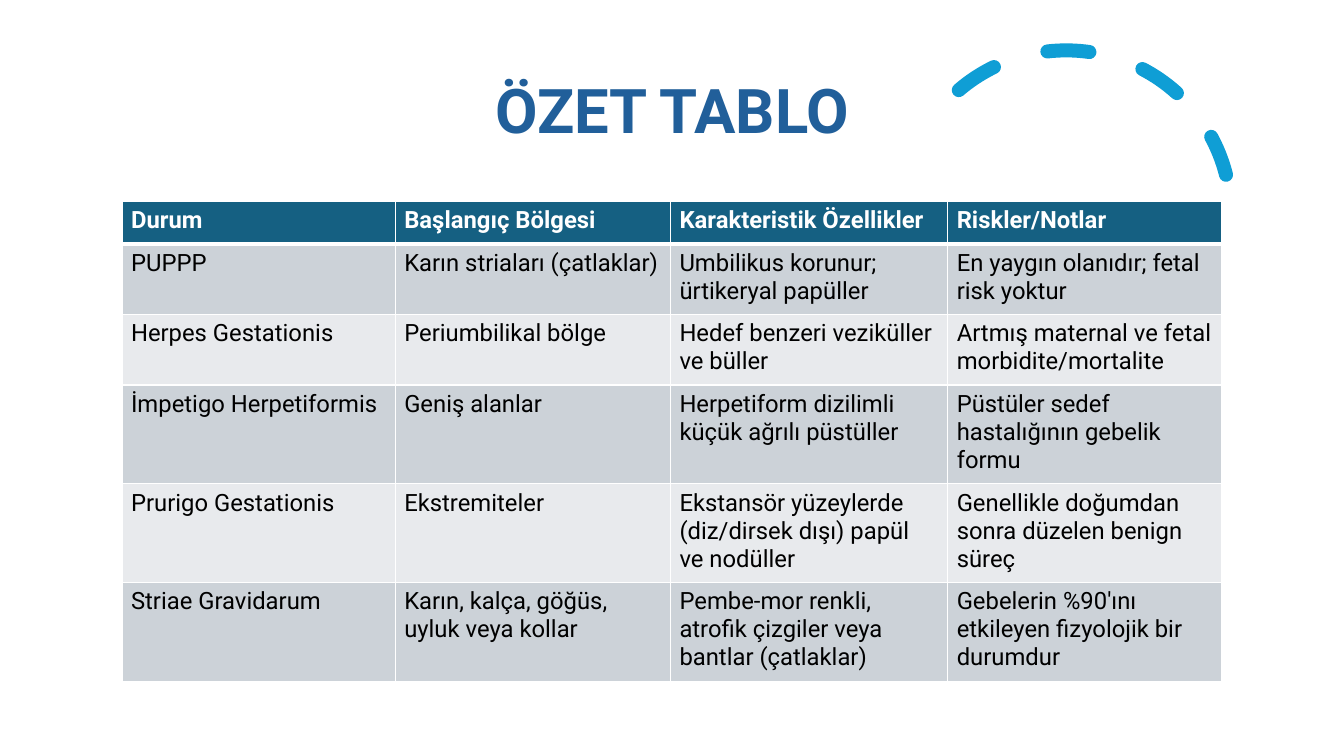
"""Build a one-slide summary table of pregnancy dermatoses."""
from lxml import etree
from pptx import Presentation
from pptx.dml.color import RGBColor
from pptx.enum.dml import MSO_LINE
from pptx.enum.shapes import MSO_SHAPE
from pptx.enum.text import MSO_ANCHOR, PP_ALIGN
from pptx.oxml.ns import qn
from pptx.util import Inches, Pt

ARC, DASH = MSO_SHAPE.ARC, MSO_LINE.DASH
MIDDLE, CENTER = MSO_ANCHOR.MIDDLE, PP_ALIGN.CENTER

WHITE = RGBColor(0xFF, 0xFF, 0xFF)
BLACK = RGBColor(0x00, 0x00, 0x00)
TITLE_BLUE = RGBColor(0x21, 0x5F, 0x9A)
ARC_BLUE = RGBColor(0x0F, 0x9E, 0xD5)
HEADER_TEAL = RGBColor(0x15, 0x60, 0x82)
BANDS = (RGBColor(0xCC, 0xD2, 0xD8), RGBColor(0xE8, 0xEA, 0xED))

SLIDE_WIDTH, SLIDE_HEIGHT = Inches(13.33), Inches(7.5)
COLUMN_WIDTHS = (2.71, 2.73, 2.75, 2.72)
ROW_PADDING, LINE_HEIGHT = 0.14, 0.28
ROW_LINES = (1, 2, 2, 3, 3, 3)
CELL_MARGINS = {
    "margin_left": Inches(0.09), "margin_right": Inches(0.09),
    "margin_top": Inches(0.05), "margin_bottom": Inches(0.05),
}
TITLE_FONT = {"name": "Roboto", "size": Pt(44), "bold": True}
HEADER_FONT = {"name": "Roboto", "size": Pt(17), "bold": True}
BODY_FONT = {**HEADER_FONT, "bold": False}

CONDITIONS = (
    ("Durum", "Başlangıç Bölgesi", "Karakteristik Özellikler", "Riskler/Notlar"),
    ("PUPPP", "Karın striaları (çatlaklar)",
     "Umbilikus korunur; ürtikeryal papüller",
     "En yaygın olanıdır; fetal risk yoktur"),
    ("Herpes Gestationis", "Periumbilikal bölge",
     "Hedef benzeri veziküller ve büller",
     "Artmış maternal ve fetal morbidite/mortalite"),
    ("İmpetigo Herpetiformis", "Geniş alanlar",
     "Herpetiform dizilimli küçük ağrılı püstüller",
     "Püstüler sedef hastalığının gebelik formu"),
    ("Prurigo Gestationis", "Ekstremiteler",
     "Ekstansör yüzeylerde (diz/dirsek dışı) papül ve nodüller",
     "Genellikle doğumdan sonra düzelen benign süreç"),
    ("Striae Gravidarum", "Karın, kalça, göğüs, uyluk veya kollar",
     "Pembe-mor renkli, atrofik çizgiler veya bantlar (çatlaklar)",
     "Gebelerin %90'ını etkileyen fizyolojik bir durumdur"),
)


def apply(target, values):
    """Set each named attribute on the target."""
    for name, value in values.items():
        setattr(target, name, value)


def write(frame, text, font, color):
    """Put one formatted run in the frame and return its paragraph."""
    paragraph = frame.paragraphs[0]
    run = paragraph.add_run()
    run.text = text
    apply(run.font, font)
    run.font.color.rgb = color
    return paragraph


def add_dashed_arc(slide):
    """Draw the tilted dashed arc at the top right."""
    arc = slide.shapes.add_shape(
        ARC, Inches(8.94), Inches(0.5), Inches(3.27), Inches(3.27))
    arc.adjustments[0], arc.adjustments[1] = 146.13, 0
    arc.rotation = 345.8
    arc.shadow.inherit = False
    arc.fill.background()
    arc.line.color.rgb = ARC_BLUE
    apply(arc.line, {"width": Pt(10), "dash_style": DASH})
    arc.line._get_or_add_ln().set("cap", "rnd")


def add_title(slide, text):
    """Add the centred heading."""
    title = slide.shapes.add_textbox(
        Inches(0.92), Inches(0.4), Inches(11.5), Inches(1.45))
    apply(title.text_frame, {"word_wrap": True, "vertical_anchor": MIDDLE})
    heading = write(title.text_frame, text, TITLE_FONT, TITLE_BLUE)
    apply(heading, {"alignment": CENTER, "line_spacing": 0.9})


def add_borders(cell, bottom, top):
    """Give the cell white borders, with its own top and bottom widths."""
    properties = cell._tc.get_or_add_tcPr()
    for side, width in (("L", 1), ("R", 1), ("T", top), ("B", bottom)):
        border = etree.SubElement(
            properties, qn(f"a:ln{side}"), w=str(Pt(width)))
        fill = etree.SubElement(border, qn("a:solidFill"))
        etree.SubElement(fill, qn("a:srgbClr"), val=str(WHITE))


def fill_cell(cell, text, row):
    """Style and write one cell according to its row."""
    is_header = row == 0
    add_borders(cell, bottom=3 if is_header else 1, top=3 if row == 1 else 1)
    cell.fill.solid()
    cell.fill.fore_color.rgb = HEADER_TEAL if is_header else BANDS[(row - 1) % 2]
    apply(cell, CELL_MARGINS)
    write(cell.text_frame, text, HEADER_FONT if is_header else BODY_FONT,
          WHITE if is_header else BLACK)


def add_summary_table(slide):
    """Add the table, with row heights following their line counts."""
    heights = [ROW_PADDING + LINE_HEIGHT * lines for lines in ROW_LINES]
    summary = slide.shapes.add_table(
        len(heights), len(COLUMN_WIDTHS), Inches(1.21), Inches(2),
        Inches(sum(COLUMN_WIDTHS)), Inches(sum(heights))).table
    apply(summary, {"first_row": False, "horz_banding": False})
    for column, width in zip(summary.columns, COLUMN_WIDTHS):
        column.width = Inches(width)
    for row, (height, texts) in enumerate(zip(heights, CONDITIONS)):
        summary.rows[row].height = Inches(height)
        for column, text in enumerate(texts):
            fill_cell(summary.cell(row, column), text, row)


def main():
    """Build and save the slide."""
    deck = Presentation()
    apply(deck, {"slide_width": SLIDE_WIDTH, "slide_height": SLIDE_HEIGHT})
    slide = deck.slides.add_slide(deck.slide_layouts[6])
    add_dashed_arc(slide)
    add_title(slide, "ÖZET TABLO")
    add_summary_table(slide)
    deck.save("out.pptx")


if __name__ == "__main__":
    main()
